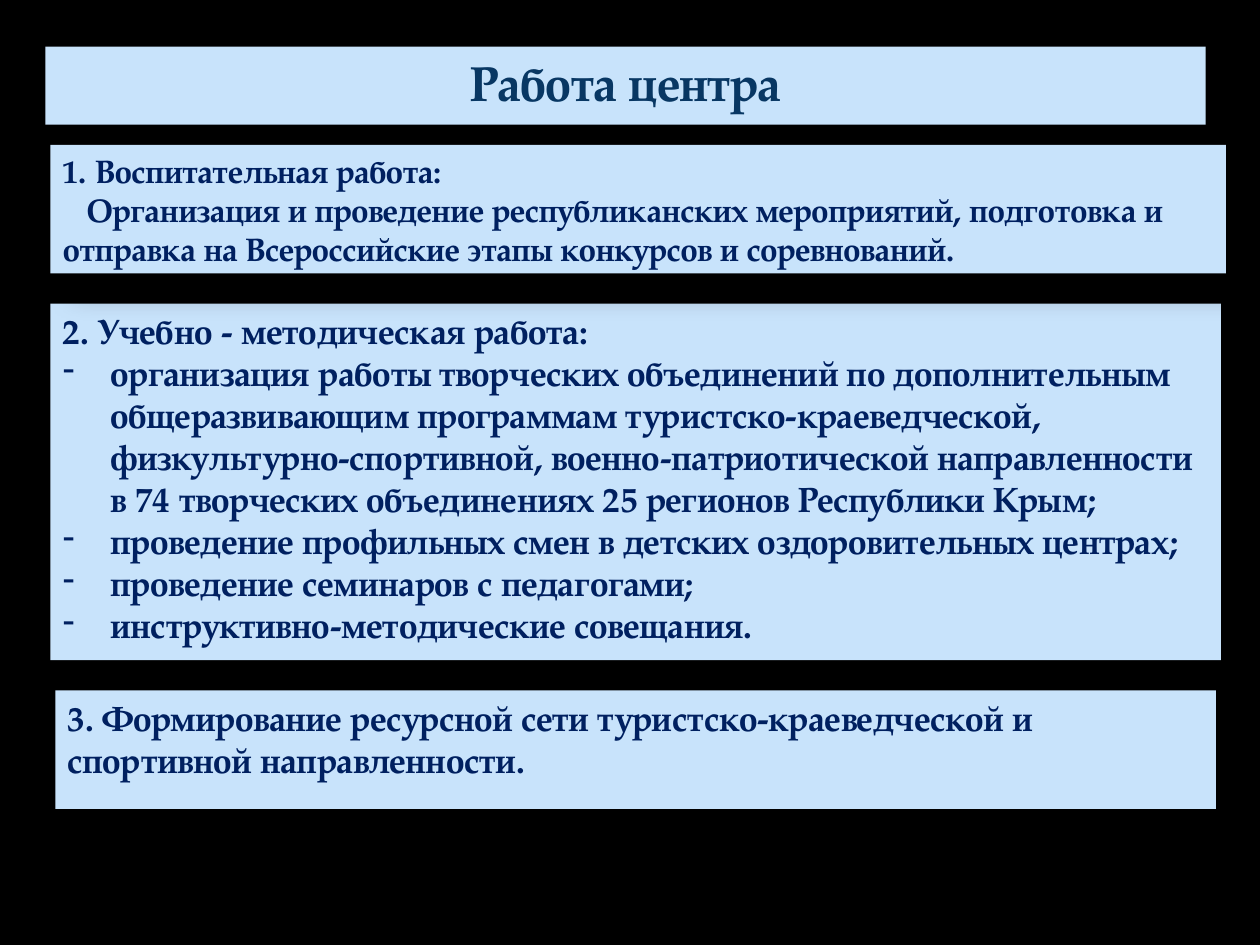
from pptx import Presentation
from pptx.dml.color import RGBColor
from pptx.enum.shapes import MSO_SHAPE
from pptx.enum.text import MSO_ANCHOR, PP_ALIGN
from pptx.oxml import parse_xml
from pptx.oxml.ns import nsdecls
from pptx.util import Inches, Pt

RECT = MSO_SHAPE.RECTANGLE
TOP = MSO_ANCHOR.TOP
LEFT, CENTER = PP_ALIGN.LEFT, PP_ALIGN.CENTER

COLORS = {"back": "000000", "panel": "C8E3FB", "title": "083763", "text": "002060"}
FONT = "TeX Gyre Pagella"
HANG = 0.38
FIRST = 0.19

SHADOW = f"""<a:effectLst {nsdecls("a")}>
  <a:outerShdw blurRad="{Pt(15)}" dist="{Pt(18)}" dir="2700000" algn="tl" rotWithShape="0">
    <a:srgbClr val="{COLORS["back"]}"><a:alpha val="26000"/></a:srgbClr>
  </a:outerShdw>
</a:effectLst>"""


def color(name):
    return RGBColor.from_string(COLORS[name])


class Deck:
    def __init__(self):
        self.prs = Presentation()
        self.prs.slide_width, self.prs.slide_height = Inches(10), Inches(7.5)
        self.slide = self.prs.slides.add_slide(self.prs.slide_layouts[6])
        fill = self.slide.background.fill
        fill.solid()
        fill.fore_color.rgb = color("back")

    def panel(self, box, lines, size=20, ink="text", align=LEFT):
        """Add a shaded panel; each line is a (kind, text) pair."""
        shape = self.slide.shapes.add_shape(RECT, *map(Inches, box))
        shape.fill.solid()
        shape.fill.fore_color.rgb = color("panel")
        shape.line.fill.background()
        shape._element.spPr.append(parse_xml(SHADOW))
        frame = shape.text_frame
        frame.word_wrap = True
        frame.vertical_anchor = TOP
        frame.text = "\n".join(text for _, text in lines)
        for para, (kind, _) in zip(frame.paragraphs, lines):
            para.alignment = align
            self.indent(para, kind)
            for run in para.runs:
                font = run.font
                font.name, font.size, font.bold = FONT, Pt(size), True
                font.color.rgb = color(ink)

    def indent(self, para, kind):
        props = para._p.get_or_add_pPr()
        if kind == "dash":
            props.set("marL", str(Inches(HANG)))
            props.set("indent", str(-Inches(HANG)))
            props.append(parse_xml(f'<a:buChar {nsdecls("a")} char="-"/>'))
        elif kind == "first":
            props.set("indent", str(Inches(FIRST)))

    def save(self):
        self.prs.save("out.pptx")


def main():
    deck = Deck()
    deck.panel((0.4, 2.41, 9.29, 2.83), [
        ("plain", "2. Учебно - методическая работа:"),
        ("dash", "организация работы творческих объединений по дополнительным "
                 "общеразвивающим программам туристско-краеведческой, "
                 "физкультурно-спортивной, военно-патриотической направленности "
                 "в 74 творческих объединениях 25 регионов Республики Крым;"),
        ("dash", "проведение профильных смен в детских оздоровительных центрах;"),
        ("dash", "проведение семинаров с педагогами;"),
        ("dash", "инструктивно-методические совещания."),
    ])
    deck.panel((0.36, 0.37, 9.21, 0.62), [("plain", "Работа центра")],
               size=28, ink="title", align=CENTER)
    deck.panel((0.4, 1.15, 9.33, 1.02), [
        ("plain", "1. Воспитательная работа:"),
        ("first", "Организация и проведение республиканских мероприятий, подготовка и "
                  "отправка на Всероссийские этапы конкурсов и соревнований."),
    ], size=18.5)
    deck.panel((0.44, 5.48, 9.21, 0.94), [
        ("plain", "3. Формирование ресурсной сети туристско-краеведческой и "
                  "спортивной направленности."),
    ])
    deck.save()


if __name__ == "__main__":
    main()
